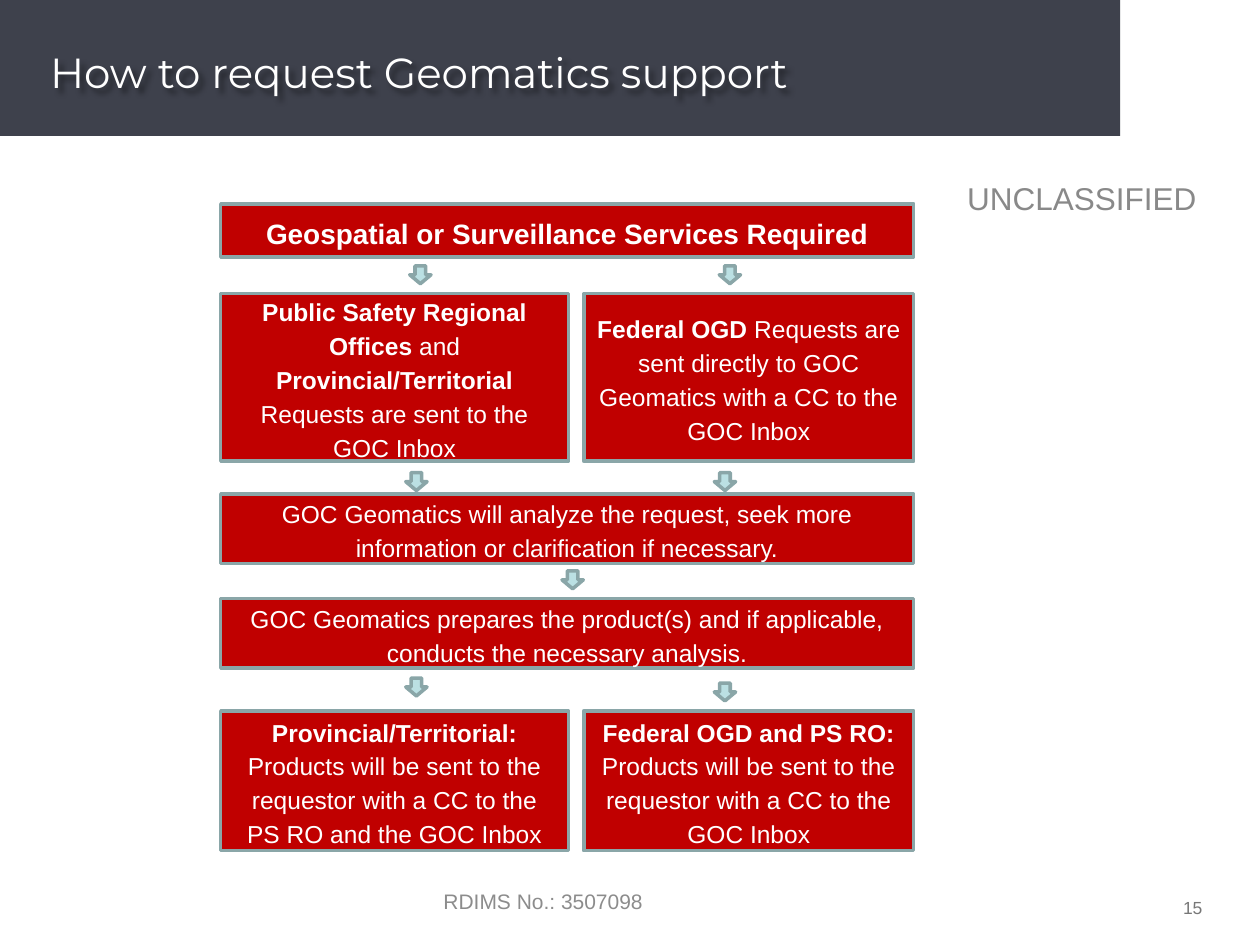
from dataclasses import dataclass

from lxml.etree import SubElement
from pptx import Presentation
from pptx.dml.color import RGBColor
from pptx.enum.shapes import MSO_SHAPE as Preset
from pptx.enum.text import MSO_ANCHOR as Anchor, PP_ALIGN as Align
from pptx.oxml.ns import qn
from pptx.util import Cm, Pt


@dataclass(frozen=True)
class Theme:
    banner: str = "3E414C"
    box: str = "C00000"
    outline: str = "8AA6A8"
    arrow: str = "BBE0E3"
    light: str = "FFFFFF"
    marking: str = "898989"
    reference: str = "8C8C8C"
    number: str = "777777"
    title_font: str = "Montserrat"
    body_font: str = "Arial"
    title_size: int = 24
    marking_size: int = 18
    heading_size: int = 16
    step_size: int = 14
    reference_size: int = 12
    number_size: int = 10


THEME = Theme()

# Text, (left, top, width, height) in cm, size, colour, alignment, anchor
TITLE = ("How to request Geomatics support", (0.76, 0.28, 22.86, 2.34),
         THEME.title_size, THEME.light, Align.LEFT, Anchor.MIDDLE)
MARGIN_TEXTS = [
    ("15", (18.57, 17.96, 5.92, 0.71),
     THEME.number_size, THEME.number, Align.RIGHT, Anchor.TOP),
    ("RDIMS No.: 3507098", (8.69, 17.65, 8.05, 1.02),
     THEME.reference_size, THEME.reference, Align.LEFT, Anchor.MIDDLE),
    ("UNCLASSIFIED", (18.42, 3.48, 6.78, 1.02),
     THEME.marking_size, THEME.marking, Align.CENTER, Anchor.MIDDLE),
]

# Each row: top, height, type size, one or two boxes of (text, bold) runs
FLOW = [
    (4.11, 1.07, THEME.heading_size, [
        [("Geospatial or Surveillance Services Required", True)],
    ]),
    (5.92, 3.38, THEME.step_size, [
        [("Public Safety Regional Offices", True), (" and ", False),
         ("Provincial/Territorial", True),
         (" Requests are sent to the GOC Inbox", False)],
        [("Federal OGD", True),
         (" Requests are sent directly to GOC Geomatics with a CC to the "
          "GOC Inbox", False)],
    ]),
    (9.96, 1.4, THEME.step_size, [
        [("GOC Geomatics will analyze the request, seek more information or "
          "clarification if necessary.", False)],
    ]),
    (12.07, 1.4, THEME.step_size, [
        [("GOC Geomatics prepares the product(s) and if applicable, conducts "
          "the necessary analysis.", False)],
    ]),
    (14.33, 2.82, THEME.step_size, [
        [("Provincial/Territorial:", True),
         (" Products will be sent to the requestor with a CC to the PS RO "
          "and the GOC Inbox", False)],
        [("Federal OGD and PS RO:", True),
         (" Products will be sent to the requestor with a CC to the GOC Inbox",
          False)],
    ]),
]
FLOW_LEFT, FLOW_WIDTH = 4.45, 13.97
LEFT_WIDTH, RIGHT_WIDTH = 7.01, 6.65

ARROW_SIZE = (0.43, 0.36)
ARROWS = [(8.26, 5.36), (14.5, 5.36), (8.18, 9.53), (14.4, 9.53),
          (11.33, 11.51), (8.18, 13.67), (14.4, 13.77)]


def rgb(code):
    return RGBColor.from_string(code)


def style_font(paragraph, size, color, family=THEME.body_font):
    paragraph.font.size = Pt(size)
    paragraph.font.name = family
    paragraph.font.color.rgb = rgb(color)


def add_block(slide, preset, place, fill, outline=None):
    block = slide.shapes.add_shape(preset, *map(Cm, place))
    block.shadow.inherit = False
    block.fill.solid()
    block.fill.fore_color.rgb = rgb(fill)
    if outline:
        block.line.color.rgb = rgb(outline)
        block.line.width = Pt(2)
    else:
        block.line.fill.background()
    return block


def add_label(slide, text, place, size, color, align, anchor,
              family=THEME.body_font):
    label = slide.shapes.add_textbox(*map(Cm, place))
    frame = label.text_frame
    frame.word_wrap = True
    frame.vertical_anchor = anchor
    paragraph = frame.paragraphs[0]
    paragraph.text = text
    paragraph.alignment = align
    style_font(paragraph, size, color, family)
    return label


def add_soft_shadow(label):
    """Cast a blurred shadow, which falls on the text of an unfilled box."""
    effects = SubElement(label.element.spPr, qn("a:effectLst"))
    shadow = SubElement(effects, qn("a:outerShdw"), blurRad="38100",
                        dist="38100", dir="2700000", algn="tl")
    tint = SubElement(shadow, qn("a:srgbClr"), val="000000")
    SubElement(tint, qn("a:alpha"), val="43000")


def add_step(slide, place, size, runs):
    step = add_block(slide, Preset.RECTANGLE, place, THEME.box, THEME.outline)
    frame = step.text_frame
    frame.word_wrap = True
    frame.vertical_anchor = Anchor.MIDDLE
    paragraph = frame.paragraphs[0]
    paragraph.alignment = Align.CENTER
    paragraph.line_spacing = 1.15
    paragraph.space_after = Pt(10)
    style_font(paragraph, size, THEME.light)
    for text, bold in runs:
        run = paragraph.add_run()
        run.text = text
        run.font.bold = bold


def columns(count):
    """Return (left, width) of each box in a row of one or two."""
    if count == 1:
        return [(FLOW_LEFT, FLOW_WIDTH)]
    return [(FLOW_LEFT, LEFT_WIDTH),
            (FLOW_LEFT + FLOW_WIDTH - RIGHT_WIDTH, RIGHT_WIDTH)]


def main():
    deck = Presentation()
    deck.slide_width, deck.slide_height = Cm(25.4), Cm(19.05)
    slide = deck.slides.add_slide(deck.slide_layouts[6])

    add_block(slide, Preset.RECTANGLE, (0, 0, 22.58, 2.74), THEME.banner)
    add_soft_shadow(add_label(slide, *TITLE, family=THEME.title_font))
    for margin_text in MARGIN_TEXTS:
        add_label(slide, *margin_text)

    for top, height, size, steps in FLOW:
        for (left, width), runs in zip(columns(len(steps)), steps):
            add_step(slide, (left, top, width, height), size, runs)
    for corner in ARROWS:
        add_block(slide, Preset.DOWN_ARROW, corner + ARROW_SIZE,
                  THEME.arrow, THEME.outline)

    deck.save("out.pptx")


if __name__ == "__main__":
    main()
